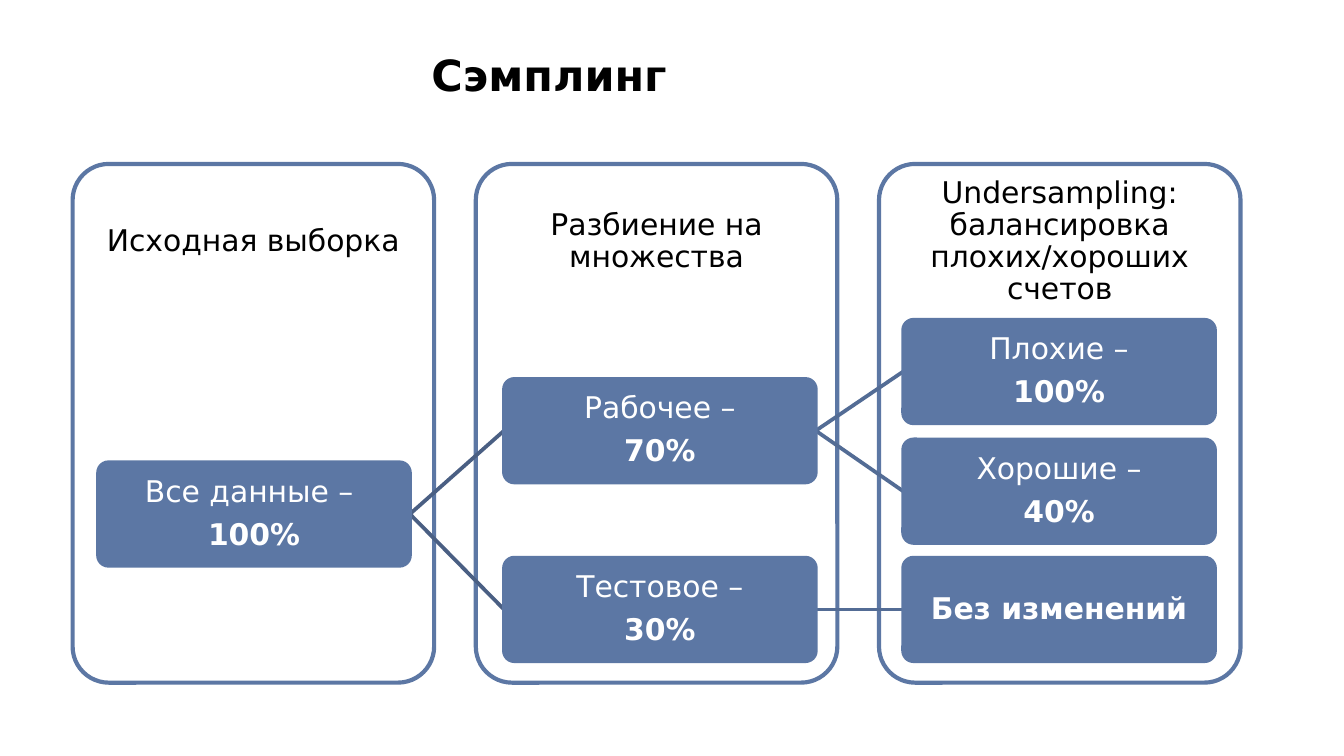
from lxml import etree
from pptx import Presentation
from pptx.dml.color import RGBColor
from pptx.enum.shapes import MSO_CONNECTOR, MSO_SHAPE
from pptx.enum.text import MSO_ANCHOR, PP_ALIGN
from pptx.oxml.ns import qn
from pptx.util import Inches, Pt

ROUNDED = MSO_SHAPE.ROUNDED_RECTANGLE
STRAIGHT = MSO_CONNECTOR.STRAIGHT
MIDDLE = MSO_ANCHOR.MIDDLE
CENTER, LEFT = PP_ALIGN.CENTER, PP_ALIGN.LEFT

TITLE = "Сэмплинг"
STAGES = [
    "Исходная выборка",
    "Разбиение на множества",
    "Undersampling: балансировка плохих/хороших счетов",
]
NODES = {
    "all": (0.73, 3.44, "Все данные – ", "100%"),
    "train": (3.75, 2.82, "Рабочее –", "70%"),
    "test": (3.75, 4.15, "Тестовое –", "30%"),
    "bad": (6.72, 2.38, "Плохие –", "100%"),
    "good": (6.72, 3.27, "Хорошие –", "40%"),
    "same": (6.72, 4.15, "", "Без изменений"),
}
LINKS = [
    ("all", "train", "first_link"),
    ("all", "test", "first_link"),
    ("train", "bad", "second_link"),
    ("train", "good", "second_link"),
    ("test", "same", "second_link"),
]
THEME = {
    "font": "DejaVu Sans",
    "blue": RGBColor.from_string("5C77A4"),
    "first_link": RGBColor.from_string("4A5F83"),
    "second_link": RGBColor.from_string("536C95"),
    "black": RGBColor.from_string("000000"),
    "white": RGBColor.from_string("FFFFFF"),
    "title": Pt(23),
    "body": Pt(16),
}
PANEL_X, PANEL_Y, PANEL_STEP = 0.54, 1.22, 3
PANEL_W, PANEL_H, HEADING_H = 2.69, 3.86, 1.16
NODE_W, NODE_H = 2.32, 0.77


def set_font(p, size, color, bold=False):
    p.font.name = THEME["font"]
    p.font.size = size
    p.font.color.rgb = color
    p.font.bold = bold


def write(s, lines, color, margin):
    tf = s.text_frame
    tf.word_wrap = True
    tf.vertical_anchor = MIDDLE
    tf.margin_left = tf.margin_right = Inches(margin)
    tf.margin_top = tf.margin_bottom = Inches(margin)
    for i, (text, bold) in enumerate(lines):
        p = tf.add_paragraph() if i else tf.paragraphs[0]
        p.text = text
        p.alignment = CENTER
        p.line_spacing = 0.9
        p.space_after = Pt(5.9)
        set_font(p, THEME["body"], color, bold)


def add_rounded(slide, x, y, w, h, line_width):
    s = slide.shapes.add_shape(ROUNDED, Inches(x), Inches(y), Inches(w), Inches(h))
    s.adjustments[0] = 0.1
    s.shadow.inherit = False
    s.line.color.rgb = THEME["blue"]
    s.line.width = Pt(line_width)
    return s


def add_stage(slide, i, heading):
    x = PANEL_X + i * PANEL_STEP
    add_rounded(slide, x, PANEL_Y, PANEL_W, PANEL_H, 2.25).fill.background()
    box = slide.shapes.add_textbox(
        Inches(x), Inches(PANEL_Y), Inches(PANEL_W), Inches(HEADING_H))
    write(box, [(heading, False)], THEME["black"], 0.12)


def add_link(slide, start, end, color):
    x1, y1 = NODES[start][:2]
    x2, y2 = NODES[end][:2]
    c = slide.shapes.add_connector(
        STRAIGHT, Inches(x1 + NODE_W), Inches(y1 + NODE_H / 2),
        Inches(x2), Inches(y2 + NODE_H / 2))
    c.line.color.rgb = THEME[color]
    c.line.width = Pt(2)
    etree.SubElement(c._element.spPr, qn("a:effectLst"))


def add_node(slide, x, y, label, value):
    s = add_rounded(slide, x, y, NODE_W, NODE_H, 2)
    s.fill.solid()
    s.fill.fore_color.rgb = THEME["blue"]
    lines = [(label, False)] if label else []
    write(s, lines + [(value, True)], THEME["white"], 0.01)


def add_title(slide):
    s = slide.shapes.title
    s.left, s.top, s.width, s.height = map(Inches, (3.11, 0.29, 6.64, 0.53))
    s.text_frame.vertical_anchor = MIDDLE
    p = s.text_frame.paragraphs[0]
    p.text = TITLE
    p.alignment = LEFT
    set_font(p, THEME["title"], THEME["black"], True)


def main():
    prs = Presentation()
    prs.slide_width = Inches(10)
    prs.slide_height = prs.slide_width * 9 // 16
    slide = prs.slides.add_slide(prs.slide_layouts[5])
    add_title(slide)
    for i, heading in enumerate(STAGES):
        add_stage(slide, i, heading)
    for link in LINKS:
        add_link(slide, *link)
    for node in NODES.values():
        add_node(slide, *node)
    prs.save("out.pptx")


if __name__ == "__main__":
    main()
